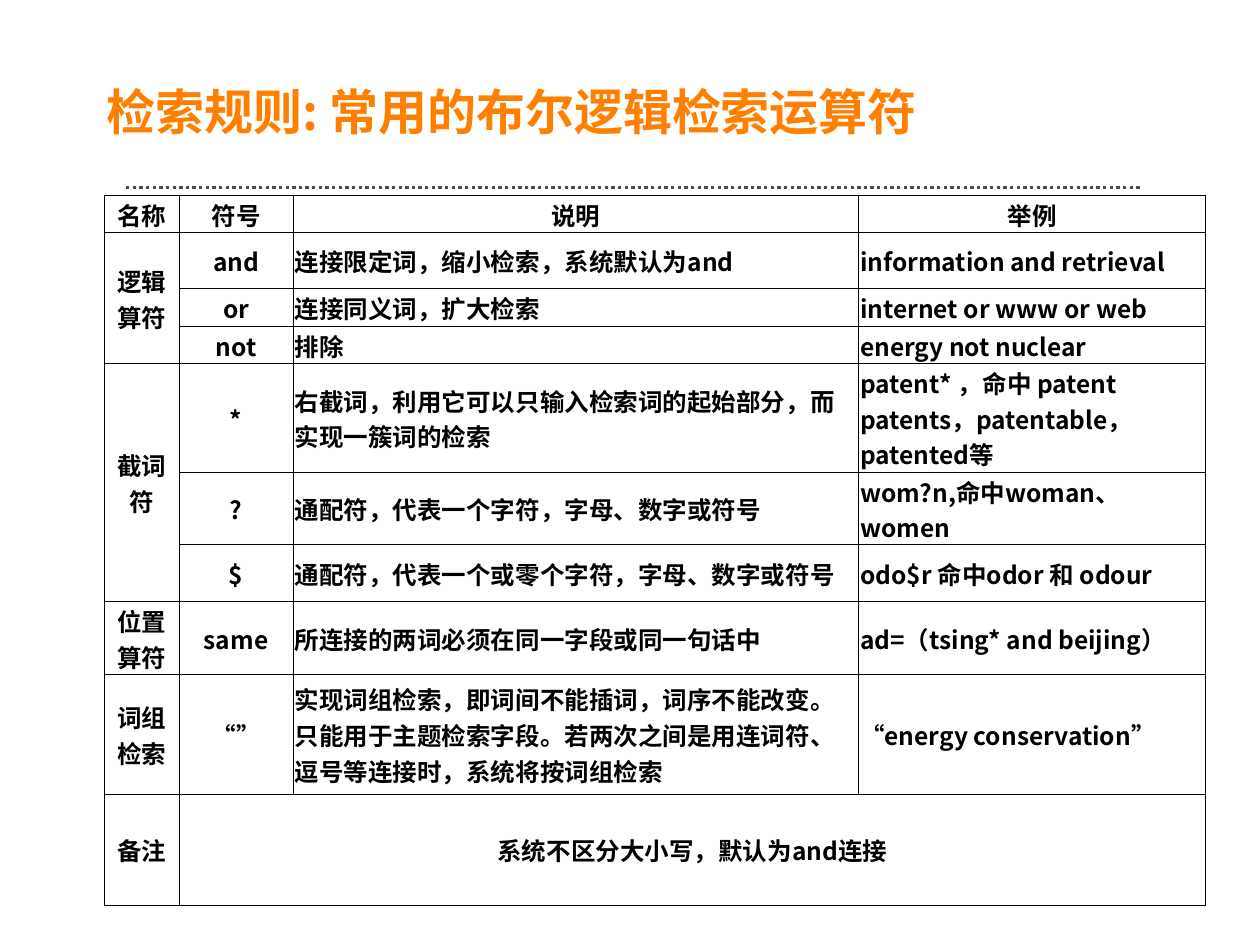
from lxml import etree
from pptx import Presentation
from pptx.dml.color import RGBColor
from pptx.enum import dml, text
from pptx.oxml import ns
from pptx.util import Cm, Pt

FONT = "Noto Sans CJK SC"
HEADINGS = ["名称", "符号", "说明", "举例"]
OPERATORS = [
    ("逻辑算符", "and", "连接限定词，缩小检索，系统默认为and", "information and retrieval"),
    ("", "or", "连接同义词，扩大检索", "internet or www or web"),
    ("", "not", "排除", "energy not nuclear"),
    ("截词符", "*", "右截词，利用它可以只输入检索词的起始部分，而实现一簇词的检索",
     "patent* ，命中 patent patents，patentable，patented等"),
    ("", "?", "通配符，代表一个字符，字母、数字或符号", "wom?n,命中woman、women"),
    ("", "$", "通配符，代表一个或零个字符，字母、数字或符号", "odo$r 命中odor 和 odour"),
    ("位置算符", "same", "所连接的两词必须在同一字段或同一句话中", "ad=（tsing* and beijing）"),
    ("词组检索", "“”",
     "实现词组检索，即词间不能插词，词序不能改变。只能用于主题检索字段。"
     "若两次之间是用连词符、逗号等连接时，系统将按词组检索",
     "“energy conservation”"),
]
REMARK = ("备注", "系统不区分大小写，默认为and连接", "", "")
COLUMN_WIDTHS = [1.5, 2.3, 11.4, 7]
ROW_HEIGHTS = [0.69, 1.14, 0.69, 0.69, 1.98, 1.14, 1.14, 1.32, 2.41, 2.24]
# First and last cell of each merged area, as (row, column)
MERGES = [((1, 0), (3, 0)), ((4, 0), (6, 0)), ((9, 1), (9, 3))]


def color(hex_string):
    return RGBColor.from_string(hex_string)


def format_paragraph(paragraph, size, hex_string, alignment):
    paragraph.alignment = alignment
    font = paragraph.font
    font.name, font.size, font.bold = FONT, Pt(size), True
    font.color.rgb = color(hex_string)
    # East Asian characters take their own font entry
    latin = font._element.find(ns.qn("a:latin"))
    east_asian = etree.Element(ns.qn("a:ea"), typeface=FONT)
    latin.addnext(east_asian)


def add_title(slide, left, top, width, height):
    title = slide.shapes.title
    title.left, title.top, title.width, title.height = map(Cm, (left, top, width, height))
    frame = title.text_frame
    frame.text = "检索规则: 常用的布尔逻辑检索运算符"
    frame.auto_size = text.MSO_AUTO_SIZE.NONE
    frame.vertical_anchor = text.MSO_ANCHOR.MIDDLE
    format_paragraph(frame.paragraphs[0], 28, "FF8000", text.PP_ALIGN.LEFT)


def add_dotted_rule(slide, left, top, width):
    rule = slide.shapes.add_connector(1, Cm(left), Cm(top), Cm(left + width), Cm(top))
    rule.line.color.rgb = color("4B4B4B")
    rule.line.width = Pt(1.9)
    rule.line.dash_style = dml.MSO_LINE.ROUND_DOT
    etree.SubElement(rule._element.spPr, ns.qn("a:effectLst"))


def add_borders(cell, hex_string, width):
    properties = cell._tc.get_or_add_tcPr()
    for side in ("lnL", "lnR", "lnT", "lnB"):
        line = etree.SubElement(properties, ns.qn("a:" + side), w=str(Pt(width)))
        fill = etree.SubElement(line, ns.qn("a:solidFill"))
        etree.SubElement(fill, ns.qn("a:srgbClr"), val=hex_string)


def format_cell(cell, content, centered):
    cell.text = content
    cell.vertical_anchor = text.MSO_ANCHOR.MIDDLE
    cell.margin_left = cell.margin_right = cell.margin_top = Cm(0.03)
    cell.margin_bottom = 0
    add_borders(cell, "000000", 0.5)
    cell.fill.background()
    alignment = text.PP_ALIGN.CENTER if centered else text.PP_ALIGN.LEFT
    format_paragraph(cell.text_frame.paragraphs[0], 14, "000000", alignment)


def add_operator_table(slide, left, top):
    rows = [HEADINGS, *OPERATORS, REMARK]
    table = slide.shapes.add_table(
        len(rows), len(HEADINGS), Cm(left), Cm(top),
        Cm(sum(COLUMN_WIDTHS)), Cm(sum(ROW_HEIGHTS))).table
    table.first_row = table.horz_banding = False
    for column, width in zip(table.columns, COLUMN_WIDTHS):
        column.width = Cm(width)
    for row, height in zip(table.rows, ROW_HEIGHTS):
        row.height = Cm(height)
    # Names, symbols, headings and the remark are centred
    for r, contents in enumerate(rows):
        for c, content in enumerate(contents):
            format_cell(table.cell(r, c), content, c < 2 or r == 0)
    for first, last in MERGES:
        table.cell(*first).merge(table.cell(*last))


def main():
    presentation = Presentation()
    presentation.slide_width, presentation.slide_height = Cm(25.4), Cm(19.05)
    slide = presentation.slides.add_slide(presentation.slide_layouts[5])
    add_dotted_rule(slide, 2.54, 3.78, 20.47)
    add_operator_table(slide, 2.11, 3.93)
    add_title(slide, 1.9, 1.52, 21.4, 1.45)
    presentation.save("out.pptx")


if __name__ == "__main__":
    main()
